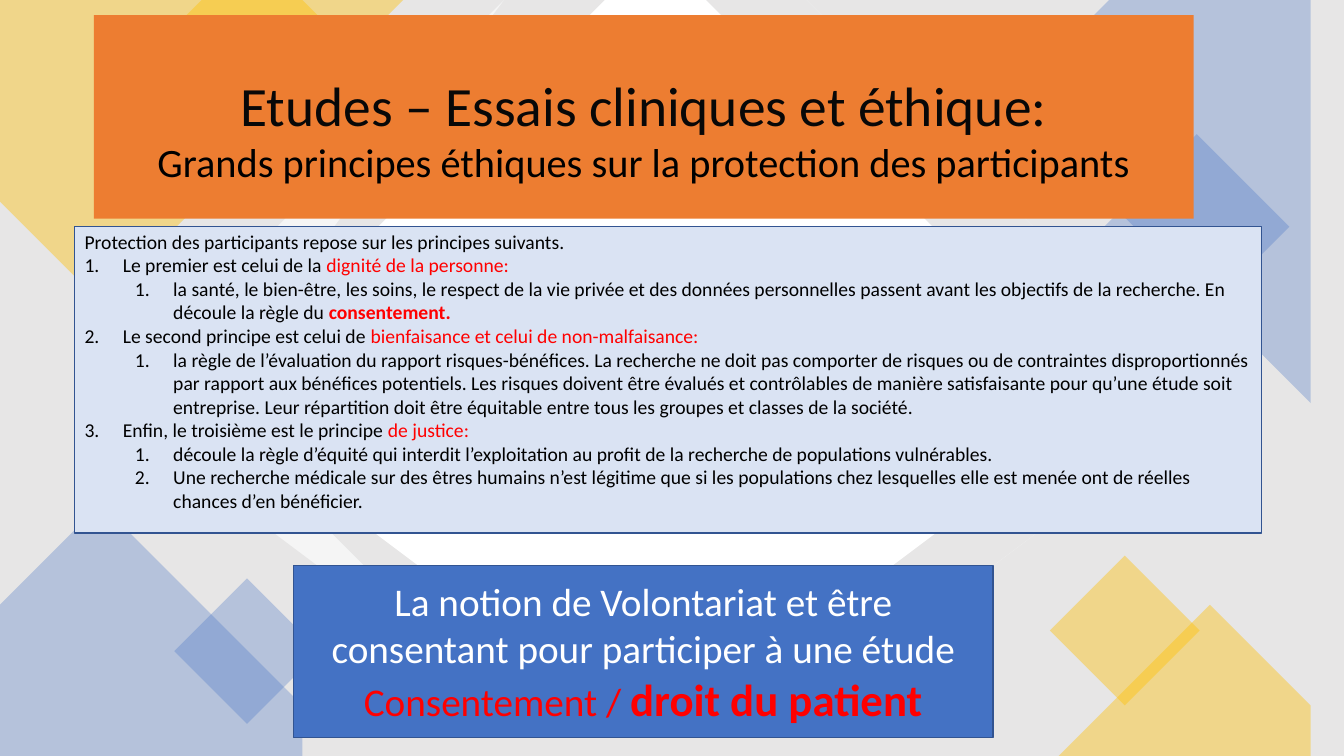
from dataclasses import dataclass

from lxml.etree import SubElement
from pptx import Presentation
from pptx.dml.color import RGBColor
from pptx.enum.shapes import MSO_SHAPE
from pptx.enum.text import MSO_ANCHOR, PP_ALIGN
from pptx.oxml.ns import qn
from pptx.util import Inches, Pt


@dataclass(frozen=True)
class Theme:
    """Colours, font and type sizes of the slide."""
    font: str = "Calibri"
    backdrop: str = "E7E6E6"
    yellow: str = "FFC000"
    blue: str = "4472C4"
    white: str = "FFFFFF"
    orange: str = "ED7D31"
    pale_blue: str = "DAE3F3"
    outline: str = "325491"
    title_ink: str = "080808"
    ink: str = "000000"
    red: str = "FF0000"
    title: float = 39.6
    subtitle: float = 28.8
    body: float = 14
    callout: float = 28
    emphasis: float = 32


THEME = Theme()


def paint(shape, fill, opacity=100, line=None):
    """Give a shape its fill, opacity and optional outline."""
    shape.shadow.inherit = False
    shape.fill.solid()
    shape.fill.fore_color.rgb = RGBColor.from_string(fill)
    if opacity < 100:
        color = shape.fill._xPr.find(qn("a:solidFill"))[0]
        SubElement(color, qn("a:alpha"), val=str(opacity * 1000))
    if line:
        shape.line.color.rgb = RGBColor.from_string(line)
        shape.line.width = Pt(1)
    else:
        shape.line.fill.background()


def add_box(slide, left, top, width, height, fill, opacity=100, line=None, rotation=0):
    """Add a painted rectangle."""
    shape = slide.shapes.add_shape(
        MSO_SHAPE.RECTANGLE, Inches(left), Inches(top), Inches(width), Inches(height))
    shape.rotation = rotation
    paint(shape, fill, opacity, line)
    return shape


def add_diamond(slide, left, top, side, fill, opacity):
    """Add a square turned by 45 degrees."""
    add_box(slide, left, top, side, side, fill, opacity, rotation=45)


def add_polygon(slide, contours, fill, opacity=100):
    """Add a freeform made of closed contours in slide inches."""
    builder = slide.shapes.build_freeform(*contours[0][0], scale=Inches(1))
    for index, (start, *others) in enumerate(contours):
        if index:
            builder.move_to(*start)
        builder.add_line_segments(others, close=True)
    paint(builder.convert_to_shape(), fill, opacity)


def add_paragraph(text_frame, runs, align=PP_ALIGN.LEFT):
    """Add a paragraph of (text, size, colour, bold) runs."""
    paragraph = text_frame.paragraphs[0]
    if paragraph.runs:
        paragraph = text_frame.add_paragraph()
    paragraph.alignment = align
    for text, size, color, bold in runs:
        run = paragraph.add_run()
        run.text = text
        run.font.name = THEME.font
        run.font.size = Pt(size)
        run.font.bold = bold
        run.font.color.rgb = RGBColor.from_string(color)
    return paragraph


def number_paragraph(paragraph, level):
    """Number a paragraph with a hanging indent."""
    paragraph.level = level
    properties = paragraph._p.get_or_add_pPr()
    properties.set("marL", str(Inches(0.38 + 0.5 * level)))
    properties.set("indent", str(Inches(-0.38)))
    SubElement(properties, qn("a:buFont"), typeface="+mj-lt")
    SubElement(properties, qn("a:buAutoNum"), type="arabicPeriod")


def add_backdrop(slide):
    """Add the grey ground with its coloured diagonal shapes."""
    add_box(slide, 0, 0, 13.33, 7.5, THEME.backdrop)
    add_polygon(slide, [[(0, 0), (3.75, 0), (0.96, 2.79), (0, 1.83)]], THEME.yellow, 40)
    add_polygon(slide, [[(1.87, 0), (3.35, 0), (3.88, 0.52), (2.61, 1.79), (1.35, 0.52)]],
                THEME.yellow, 40)
    add_polygon(slide, [[(11, 0), (13.33, 0), (13.33, 3.94), (10.19, 0.8)]], THEME.blue, 30)
    add_diamond(slide, 11.22, 1.6, 1.3, THEME.blue, 30)
    add_polygon(slide, [[(1.27, 5.12), (3.16, 7.01), (2.67, 7.5), (0, 7.5), (0, 6.39)]],
                THEME.blue, 30)
    add_diamond(slide, 1.94, 5.95, 1.02, THEME.blue, 30)
    add_polygon(slide, [[(6.25, 0), (7.08, 0), (10.83, 3.75), (7.09, 7.49), (6.24, 7.49),
                         (2.5, 3.75)]], THEME.white)
    right_stripe = [(8.04, 0), (8.17, 0), (11.92, 3.75), (8.18, 7.49), (8.05, 7.49),
                    (11.79, 3.75)]
    left_stripe = [(13.33 - x, y) for x, y in right_stripe]
    add_polygon(slide, [right_stripe, left_stripe], THEME.white, 60)
    add_polygon(slide, [[(11.88, 5.52), (13.33, 6.98), (13.33, 7.5), (9.9, 7.5)]],
                THEME.yellow, 40)
    add_diamond(slide, 10.63, 5.73, 1.05, THEME.yellow, 40)


def add_title(slide):
    """Add the orange title band."""
    text_frame = add_box(slide, 0.93, 0.15, 10.91, 2.02, THEME.orange).text_frame
    text_frame.word_wrap = True
    text_frame.vertical_anchor = MSO_ANCHOR.MIDDLE
    text_frame.margin_top = Inches(0.27)
    add_paragraph(text_frame, [("Etudes – Essais cliniques et éthique:", THEME.title,
                                THEME.title_ink, False)], PP_ALIGN.CENTER)
    add_paragraph(text_frame, [("Grands principes éthiques sur la protection des participants",
                                THEME.subtitle, THEME.ink, False)], PP_ALIGN.CENTER)


def add_principles(slide):
    """Add the panel with the numbered principles."""
    principles = [
        (0, "Le premier est celui de la ", "dignité de la personne:"),
        (1, "la santé, le bien-être, les soins, le respect de la vie privée et des données "
            "personnelles passent avant les objectifs de la recherche. En découle la règle du ",
         "consentement."),
        (0, "Le second principe est celui de", " bienfaisance et celui de non-malfaisance:"),
        (1, "la règle de l’évaluation du rapport risques-bénéfices. La recherche ne doit pas "
            "comporter de risques ou de contraintes disproportionnés par rapport aux bénéfices "
            "potentiels. Les risques doivent être évalués et contrôlables de manière "
            "satisfaisante pour qu’une étude soit entreprise. Leur répartition doit être "
            "équitable entre tous les groupes et classes de la société.", ""),
        (0, "Enfin, le troisième est le principe ", "de justice:"),
        (1, "découle la règle d’équité qui interdit l’exploitation au profit de la recherche "
            "de populations vulnérables.", ""),
        (1, "Une recherche médicale sur des êtres humains n’est légitime que si les populations "
            "chez lesquelles elle est menée ont de réelles chances d’en bénéficier.", ""),
    ]
    text_frame = add_box(slide, 0.74, 2.25, 11.77, 3.04, THEME.pale_blue,
                         line=THEME.outline).text_frame
    text_frame.word_wrap = True
    text_frame.vertical_anchor = MSO_ANCHOR.TOP
    text_frame.margin_top = Inches(0.03)
    add_paragraph(text_frame, [("Protection des participants repose sur les principes suivants.",
                                THEME.body, THEME.ink, False)])
    for level, text, keyword in principles:
        runs = [(text, THEME.body, THEME.ink, False)]
        if keyword:
            runs.append((keyword, THEME.body, THEME.red, level == 1))
        number_paragraph(add_paragraph(text_frame, runs), level)


def add_callout(slide):
    """Add the blue box on consent."""
    text_frame = add_box(slide, 2.91, 5.61, 6.94, 1.71, THEME.blue,
                         line=THEME.outline).text_frame
    text_frame.word_wrap = True
    text_frame.vertical_anchor = MSO_ANCHOR.MIDDLE
    add_paragraph(text_frame, [
        ("La notion de Volontariat et être consentant pour participer à une étude",
         THEME.callout, THEME.white, False)], PP_ALIGN.CENTER)
    add_paragraph(text_frame, [
        ("Consentement / ", THEME.callout, THEME.red, False),
        ("droit du patient", THEME.emphasis, THEME.red, True)], PP_ALIGN.CENTER)


def main():
    """Build the slide and save it."""
    presentation = Presentation()
    presentation.slide_width = Inches(13.33)
    presentation.slide_height = Inches(7.5)
    slide = presentation.slides.add_slide(presentation.slide_layouts[6])
    add_backdrop(slide)
    add_title(slide)
    add_principles(slide)
    add_callout(slide)
    presentation.save("out.pptx")


if __name__ == "__main__":
    main()
